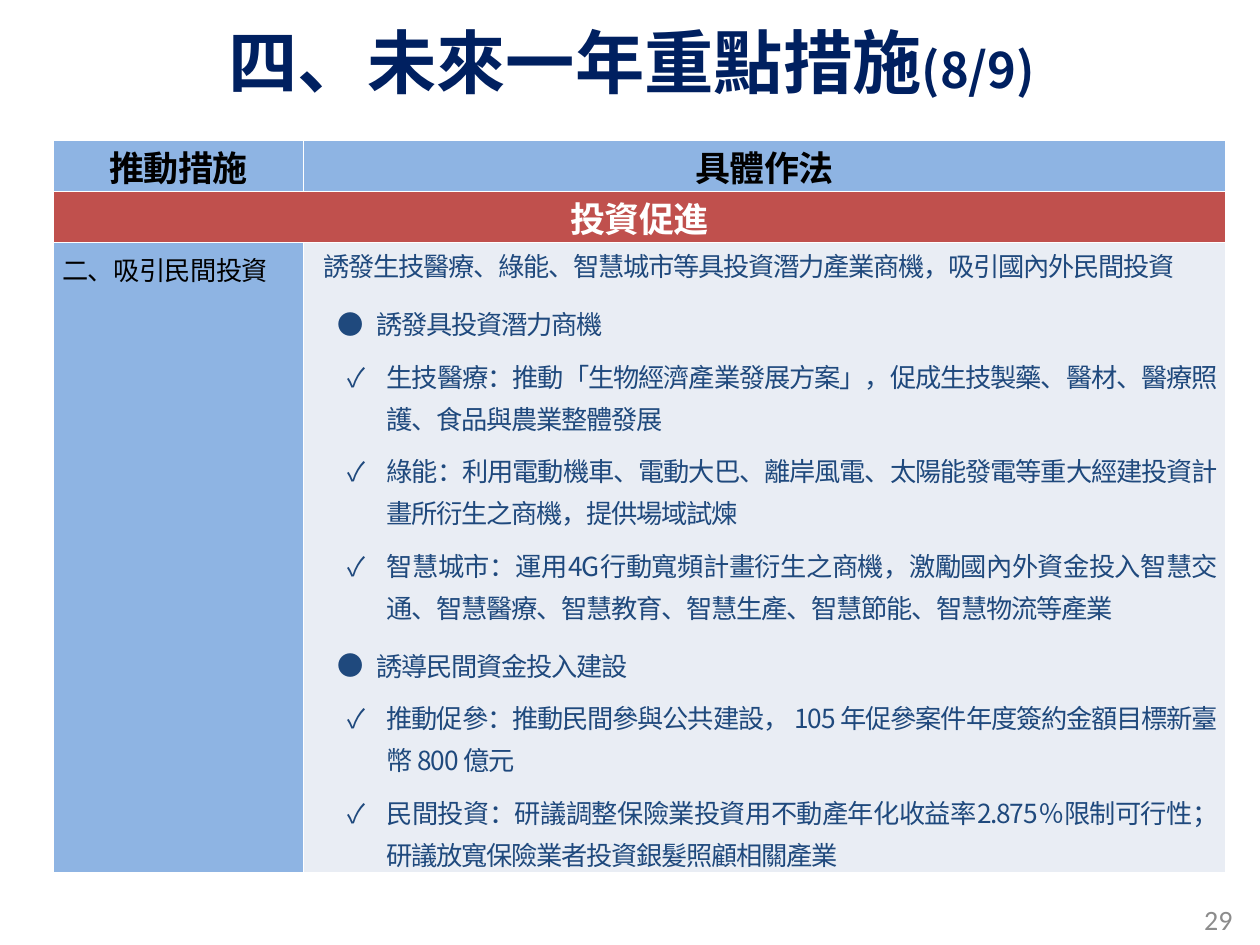
"""Build the slide on next year's key measures: a title, a measures table and a page number."""
import pptx
import pptx.dml.color
import pptx.enum.text
import pptx.oxml
import pptx.oxml.ns
import pptx.util
from lxml import etree
from dataclasses import dataclass

Pt = pptx.util.Pt
qn = pptx.oxml.ns.qn
ALIGN = pptx.enum.text.PP_ALIGN
ANCHOR = pptx.enum.text.MSO_ANCHOR


@dataclass(frozen=True)
class Theme:
    cjk: str = "Noto Sans CJK SC"
    latin: str = "Calibri"
    navy: str = "002060"
    blue: str = "1F497D"
    sky: str = "8EB4E3"
    red: str = "C0504D"
    pale: str = "E9EDF4"
    grey: str = "8C8C8C"
    black: str = "000000"
    white: str = "FFFFFF"
    title: float = 39.6
    counter: float = 27.9
    heading: float = 20
    page: float = 16
    body: float = 15


theme = Theme()


def write(paragraph, text, size, color, face=theme.cjk, bold=False, tracking=0, **layout):
    run = paragraph.add_run()
    run.text = text
    for key, value in {"name": face, "size": Pt(size), "bold": bold}.items():
        setattr(run.font, key, value)
    run.font.color.rgb = pptx.dml.color.RGBColor.from_string(color)
    properties = run.font._element
    etree.SubElement(properties, qn("a:ea")).set("typeface", face)
    if tracking:
        properties.set("spc", str(round(tracking * 100)))
    for key, value in layout.items():
        setattr(paragraph, key, value)


def indent(paragraph, margin, first, bullet=None):
    properties = paragraph._p.get_or_add_pPr()
    properties.set("marL", str(Pt(margin)))
    properties.set("indent", str(Pt(first)))
    if bullet:
        etree.SubElement(properties, qn("a:buFont")).set("typeface", theme.cjk)
        etree.SubElement(properties, qn("a:buChar")).set("char", bullet)


deck = pptx.Presentation()
deck.slide_width, deck.slide_height = Pt(720), Pt(540)
slide = deck.slides.add_slide(deck.slide_layouts[5])

title = slide.shapes.title
for key, value in {"left": 0, "top": 9.4, "width": 722, "height": 50.4}.items():
    setattr(title, key, Pt(value))
title_format = {"margin_left": 0, "margin_right": 0, "word_wrap": True,
                "vertical_anchor": ANCHOR.MIDDLE,
                "auto_size": pptx.enum.text.MSO_AUTO_SIZE.NONE}
for key, value in title_format.items():
    setattr(title.text_frame, key, value)
heading = title.text_frame.paragraphs[0]
write(heading, "四、未來一年重點措施", theme.title, theme.navy, bold=True, alignment=ALIGN.CENTER)
write(heading, "(8/9)", theme.counter, theme.navy, bold=True)

page = slide.shapes.add_textbox(Pt(543.6), Pt(511.2), Pt(167.8), Pt(28.8)).text_frame
page.word_wrap = True
page.vertical_anchor = ANCHOR.MIDDLE
write(page.paragraphs[0], "29", theme.page, theme.grey, theme.latin, alignment=ALIGN.RIGHT)

column_widths = [143, 527]
row_heights = [29.5, 29, 360]
measures = slide.shapes.add_table(3, 2, Pt(30.5), Pt(80), Pt(sum(column_widths)),
                                  Pt(sum(row_heights))).table
for column, width in zip(measures.columns, column_widths):
    column.width = Pt(width)
for row, height in zip(measures.rows, row_heights):
    row.height = Pt(height)

cell_fills = [[theme.sky, theme.sky], [theme.red, theme.red], [theme.sky, theme.pale]]
cell_format = {"margin_left": Pt(5), "margin_right": Pt(5), "margin_top": 0, "margin_bottom": 0}
for r, fills in enumerate(cell_fills):
    for c, color in enumerate(fills):
        cell = measures.cell(r, c)
        for key, value in cell_format.items():
            setattr(cell, key, value)
        cell.vertical_anchor = ANCHOR.MIDDLE if r == 0 else ANCHOR.TOP
        properties = cell._tc.get_or_add_tcPr()
        for side in ("lnL", "lnR", "lnT", "lnB"):
            border = etree.SubElement(properties, qn("a:" + side), w=str(Pt(0.75)))
            solid = etree.SubElement(border, qn("a:solidFill"))
            etree.SubElement(solid, qn("a:srgbClr")).set("val", theme.white)
        cell.fill.solid()
        cell.fill.fore_color.rgb = pptx.dml.color.RGBColor.from_string(color)
measures.cell(1, 0).merge(measures.cell(1, 1))

headings = [(0, 0, "推動措施", theme.black), (0, 1, "具體作法", theme.black),
            (1, 0, "投資促進", theme.white)]
for r, c, text, color in headings:
    write(measures.cell(r, c).text_frame.paragraphs[0], text, theme.heading, color,
          bold=True, tracking=-0.3, alignment=ALIGN.CENTER)

measure = measures.cell(2, 0).text_frame.paragraphs[0]
write(measure, "二、吸引民間投資", theme.body, theme.black, tracking=-0.3,
      line_spacing=1.2, space_before=Pt(6))

levels = {
    "summary": dict(margin=6.5, first=0, bullet=None, before=3, level=0, align=ALIGN.LEFT),
    "goal": dict(margin=36.7, first=-22.3, bullet="●", before=6, level=1, align=ALIGN.LEFT),
    "action": dict(margin=42.5, first=-22.3, bullet="✓", before=3, level=0, align=ALIGN.JUSTIFY),
}
actions = [
    ("summary", "誘發生技醫療、綠能、智慧城市等具投資潛力產業商機，吸引國內外民間投資"),
    ("goal", "誘發具投資潛力商機"),
    ("action", "生技醫療：推動「生物經濟產業發展方案」，促成生技製藥、醫材、醫療照護、食品與農業整體發展"),
    ("action", "綠能：利用電動機車、電動大巴、離岸風電、太陽能發電等重大經建投資計畫所衍生之商機，提供場域試煉"),
    ("action", "智慧城市：運用4G行動寬頻計畫衍生之商機，激勵國內外資金投入智慧交通、智慧醫療、智慧教育、智慧生產、智慧節能、智慧物流等產業"),
    ("goal", "誘導民間資金投入建設"),
    ("action", "推動促參：推動民間參與公共建設， 105 年促參案件年度簽約金額目標新臺幣 800 億元"),
    ("action", "民間投資：研議調整保險業投資用不動產年化收益率2.875％限制可行性；研議放寬保險業者投資銀髮照顧相關產業"),
]
details = measures.cell(2, 1).text_frame
for i, (kind, text) in enumerate(actions):
    style = levels[kind]
    paragraph = details.add_paragraph() if i else details.paragraphs[0]
    write(paragraph, text, theme.body, theme.blue, tracking=-0.7, alignment=style["align"],
          level=style["level"], line_spacing=Pt(24), space_before=Pt(style["before"]),
          space_after=Pt(3))
    indent(paragraph, style["margin"], style["first"], style["bullet"])

deck.save("out.pptx")
